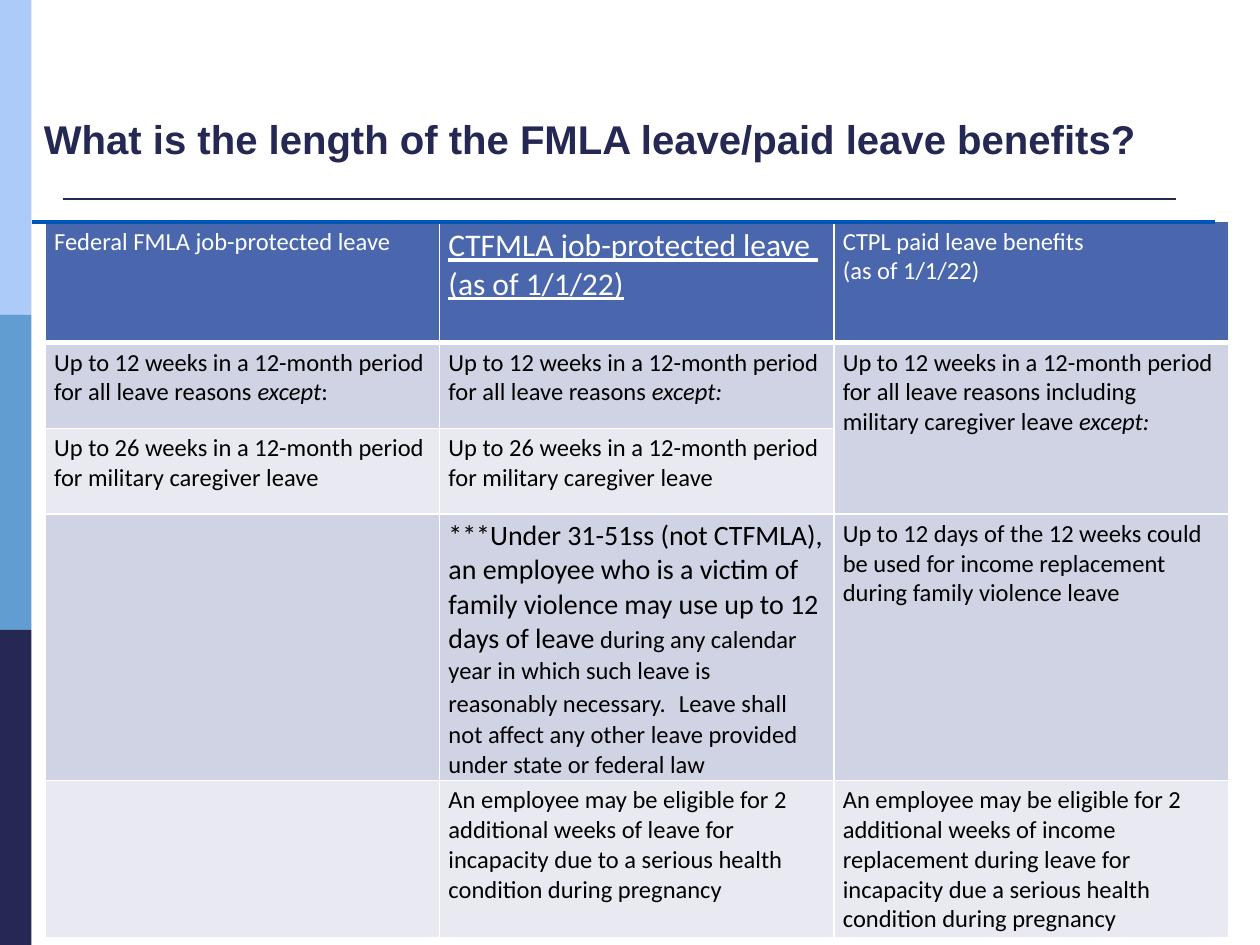
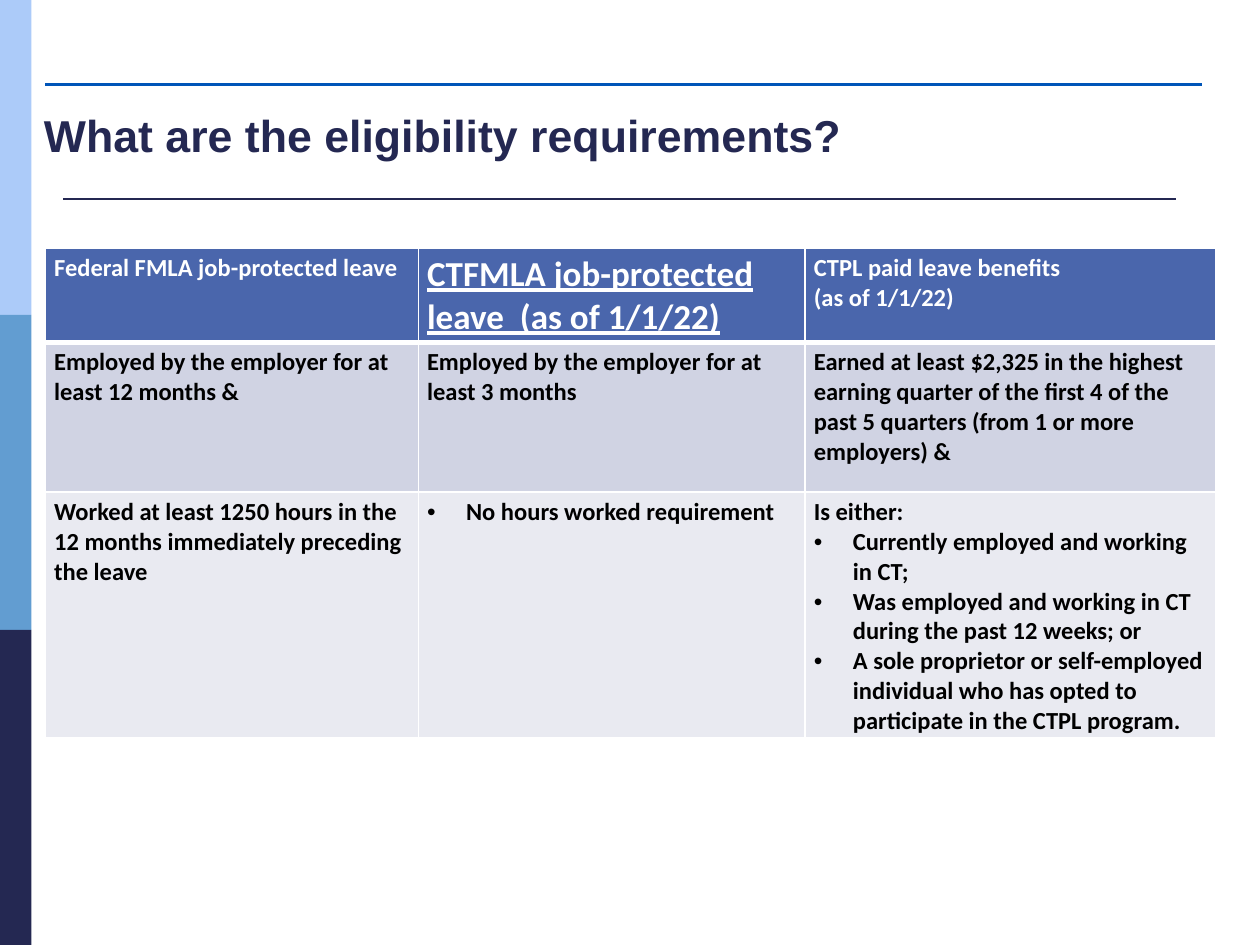
import pptx
import pptx.util
import pptx.dml.color
import pptx.enum.shapes
import pptx.enum.text
import pptx.oxml
import pptx.oxml.ns
from dataclasses import dataclass

GRID_COLUMNS, GRID_ROWS = 40, 30
SLIDE_WIDTH, SLIDE_HEIGHT = pptx.util.Inches(10), pptx.util.Inches(7.5)


@dataclass(frozen=True)
class Theme:
    navy: str = "242852"
    sky: str = "ACCBF9"
    blue: str = "629DD1"
    accent: str = "0055B8"
    header: str = "4A66AC"
    bands: tuple = ("D0D3E3", "E9EAF1")
    white: str = "FFFFFF"
    black: str = "000000"
    title_font: str = "Arial"
    body_font: str = "Calibri"
    body: float = 14
    emphasis: float = 16
    long_heading: float = 18
    short_heading: float = 20
    long_title: float = 22.9
    short_title: float = 25.5
    thin: float = 1
    rule: float = 1.5
    thick: float = 2
    header_edge: float = 3


THEME = Theme()


@dataclass(frozen=True)
class Box:
    column: float
    row: float
    columns: float
    rows: float

    def place(self):
        return (across(self.column), down(self.row),
                across(self.columns), down(self.rows))


@dataclass(frozen=True)
class Words:
    text: str
    size: float = THEME.body
    italic: bool = False
    underline: bool = False


@dataclass(frozen=True)
class Line:
    phrases: tuple
    bullet: bool = False


def across(columns):
    return round(SLIDE_WIDTH * columns / GRID_COLUMNS)


def down(rows):
    return round(SLIDE_HEIGHT * rows / GRID_ROWS)


def rgb(color):
    return pptx.dml.color.RGBColor.from_string(color)


def line_of(*phrases, bullet=False):
    words = tuple(Words(phrase) if isinstance(phrase, str) else phrase for phrase in phrases)
    return Line(words, bullet)


def text_cell(*lines):
    return [line if isinstance(line, Line) else line_of(line) for line in lines]


def add_words(paragraph, words, font, color, bold):
    run = paragraph.add_run()
    run.text = words.text
    run.font.name = font
    run.font.size = pptx.util.Pt(words.size)
    run.font.bold = bold
    run.font.italic = words.italic
    run.font.underline = words.underline
    run.font.color.rgb = rgb(color)


def add_rule(slide, box, color, weight):
    left, top, width, height = box.place()
    rule = slide.shapes.add_connector(
        pptx.enum.shapes.MSO_CONNECTOR.STRAIGHT, left, top, left + width, top + height)
    rule.line.color.rgb = rgb(color)
    rule.line.width = pptx.util.Pt(weight)
    properties = rule._element.spPr
    properties.append(properties.makeelement(pptx.oxml.ns.qn("a:effectLst"), {}))


def add_side_bands(slide, box):
    colors = (THEME.sky, THEME.blue, THEME.navy)
    step = box.rows / len(colors)
    for index, color in enumerate(colors):
        place = Box(box.column, box.row + index * step, box.columns, step).place()
        band = slide.shapes.add_shape(pptx.enum.shapes.MSO_SHAPE.RECTANGLE, *place)
        band.shadow.inherit = False
        band.fill.solid()
        band.fill.fore_color.rgb = rgb(color)
        band.line.fill.background()


def add_title(slide, box, text, size):
    title = slide.shapes.add_textbox(*box.place()).text_frame
    title.word_wrap = True
    title.vertical_anchor = pptx.enum.text.MSO_ANCHOR.BOTTOM
    add_words(title.paragraphs[0], Words(text, size), THEME.title_font, THEME.navy, True)


def add_bullet(paragraph):
    properties = paragraph._p.get_or_add_pPr()
    indent = pptx.util.Inches(0.31)
    properties.set("marL", str(indent))
    properties.set("indent", str(-indent))
    for tag, name, value in (("a:buFont", "typeface", THEME.title_font),
                             ("a:buChar", "char", "•")):
        properties.append(properties.makeelement(pptx.oxml.ns.qn(tag), {name: value}))


def add_borders(cell, bottom):
    properties = cell._tc.get_or_add_tcPr()
    weights = {"lnL": THEME.thin, "lnR": THEME.thin, "lnT": THEME.thin, "lnB": bottom}
    for side, weight in weights.items():
        properties.append(pptx.oxml.parse_xml(
            f'<a:{side} {pptx.oxml.ns.nsdecls("a")} w="{pptx.util.Pt(weight)}">'
            f'<a:solidFill><a:srgbClr val="{THEME.white}"/></a:solidFill></a:{side}>'))


def fill_cell(cell, lines, row, bold):
    is_header = row == 0
    add_borders(cell, THEME.header_edge if is_header else THEME.thin)
    cell.fill.solid()
    cell.fill.fore_color.rgb = rgb(THEME.header if is_header else THEME.bands[(row - 1) % 2])
    cell.margin_left = cell.margin_right = pptx.util.Inches(0.07)
    cell.margin_top = cell.margin_bottom = pptx.util.Inches(0.04)
    color = THEME.white if is_header else THEME.black
    for index, line in enumerate(lines):
        frame = cell.text_frame
        paragraph = frame.add_paragraph() if index else frame.paragraphs[0]
        if line.bullet:
            add_bullet(paragraph)
        for words in line.phrases:
            add_words(paragraph, words, THEME.body_font, color, bold)


def add_comparison(slide, box, column_shares, row_shares, content, merges=(), bold=False):
    table = slide.shapes.add_table(
        len(row_shares), len(column_shares), *box.place()).table
    table.first_row = table.horz_banding = False
    for column, share in zip(table.columns, column_shares):
        column.width = across(box.columns * share / sum(column_shares))
    for row, share in zip(table.rows, row_shares):
        row.height = down(box.rows * share / sum(row_shares))
    for first, last in merges:
        table.cell(*first).merge(table.cell(*last))
    for row, cells in enumerate(content):
        for column, lines in enumerate(cells):
            fill_cell(table.cell(row, column), lines, row, bold)


def add_base(deck, title_box, title, title_size):
    slide = deck.slides.add_slide(deck.slide_layouts[6])
    add_side_bands(slide, Box(0, 0, 1, GRID_ROWS))
    add_rule(slide, Box(2, 6.32, 35.32, 0), THEME.navy, THEME.rule)
    add_title(slide, title_box, title, title_size)
    return slide


def heading_row(state_heading):
    return [text_cell("Federal FMLA job-protected leave"), state_heading,
            text_cell("CTPL paid leave benefits", "(as of 1/1/22)")]


def build_leave_length(deck):
    slide = add_base(deck, Box(1, 2.68, 37.16, 2.68),
                     "What is the length of the FMLA leave/paid leave benefits?",
                     THEME.long_title)
    state_heading = [line_of(Words(text, THEME.long_heading, underline=True))
                     for text in ("CTFMLA job-protected leave ", "(as of 1/1/22)")]
    twelve_weeks = "Up to 12 weeks in a 12-month period for all leave reasons "
    caregiver = text_cell("Up to 26 weeks in a 12-month period for military caregiver leave")
    exception = Words("except:", italic=True)
    content = [
        heading_row(state_heading),
        [[line_of(twelve_weeks, Words("except", italic=True), ":")],
         [line_of(twelve_weeks, exception)],
         text_cell(twelve_weeks + "including",
                   line_of("military caregiver leave ", exception))],
        [caregiver, caregiver, []],
        [[],
         [line_of(
             Words("***Under 31-51ss (not CTFMLA), an employee who is a victim of family "
                   "violence may use up to 12 days of leave", THEME.emphasis),
             " during any calendar year in which such leave is reasonably necessary.",
             Words("  ", THEME.emphasis),
             "Leave shall not affect any other leave provided under state or federal law")],
         text_cell("Up to 12 days of the 12 weeks could be used for income replacement "
                   "during family violence leave")],
        [[],
         text_cell("An employee may be eligible for 2 additional weeks of leave for "
                   "incapacity due to a serious health condition during pregnancy"),
         text_cell("An employee may be eligible for 2 additional weeks of income "
                   "replacement during leave for incapacity due a serious health "
                   "condition during pregnancy")],
    ]
    add_comparison(slide, Box(1.44, 7.04, 37.56, 22.36), (1, 1, 1),
                   (0.96, 0.68, 0.68, 2.06, 1.21), content, merges=[((1, 2), (2, 2))])
    add_rule(slide, Box(1, 7.04, 37.56, 0), THEME.accent, THEME.thick)


def build_eligibility(deck):
    slide = add_base(deck, Box(1, 2.32, 37.16, 3),
                     "What are the eligibility requirements?", THEME.short_title)
    state_heading = [line_of(Words("CTFMLA job-protected leave  (as of 1/1/22)",
                                   THEME.short_heading, underline=True))]
    work_status = [line_of(text, bullet=True) for text in (
        "Currently employed and working in CT;",
        "Was employed and working in CT during the past 12 weeks; or",
        "A sole proprietor or self-employed individual who has opted to participate "
        "in the CTPL program.")]
    content = [
        heading_row(state_heading),
        [text_cell("Employed by the employer for at least 12 months &"),
         text_cell("Employed by the employer for at least 3 months"),
         text_cell("Earned at least $2,325 in the highest earning quarter of the first 4 "
                   "of the past 5 quarters (from 1 or more employers) &")],
        [text_cell("Worked at least 1250 hours in the 12 months immediately preceding "
                   "the leave"),
         [line_of("No hours worked requirement", bullet=True)],
         text_cell("Is either:", *work_status)],
    ]
    add_comparison(slide, Box(1.44, 7.88, 37.16, 15.44), (2.96, 3.07, 3.26),
                   (0.73, 1.19, 1.94), content, bold=True)
    add_rule(slide, Box(1.44, 2.68, 36.72, 0), THEME.accent, THEME.thick)


def main():
    deck = pptx.Presentation()
    deck.slide_width, deck.slide_height = SLIDE_WIDTH, SLIDE_HEIGHT
    build_leave_length(deck)
    build_eligibility(deck)
    deck.save("out.pptx")


if __name__ == "__main__":
    main()
